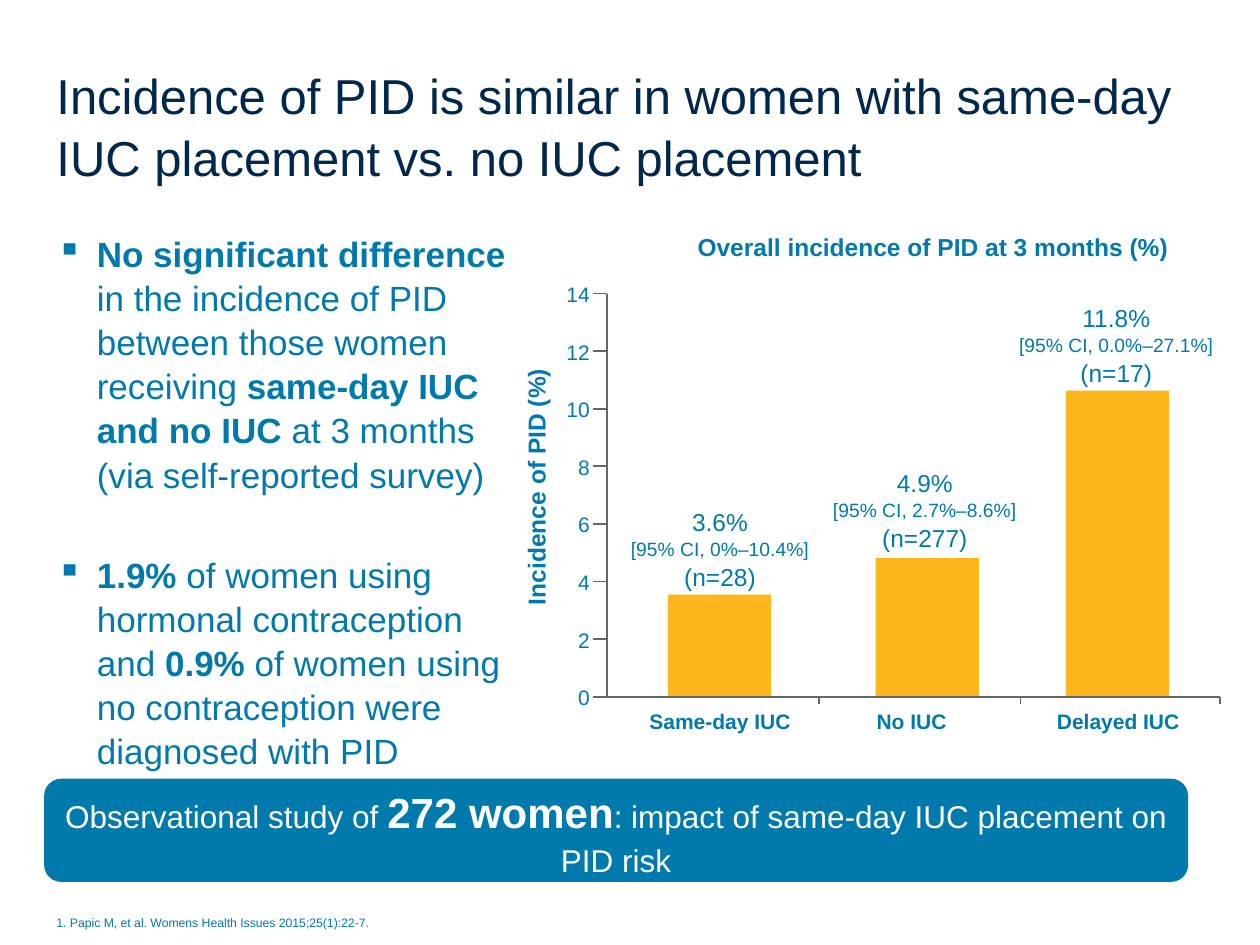
import pptx
import pptx.util
import pptx.dml.color
import pptx.enum.shapes
import pptx.enum.text
import pptx.oxml.ns
import lxml.etree
from dataclasses import dataclass

ALIGN = pptx.enum.text.PP_ALIGN
ANCHOR = pptx.enum.text.MSO_ANCHOR
KIND = pptx.enum.shapes.MSO_SHAPE


@dataclass(frozen=True)
class Theme:
    font: str = "Arial"
    navy: str = "00274C"
    blue: str = "0079AD"
    gold: str = "FDB71C"
    gray: str = "676767"
    white: str = "FFFFFF"
    title: int = 28
    body: int = 20
    large: int = 24
    lead: int = 18
    label: int = 14
    tick: int = 12
    small: int = 11
    note: int = 7
    lines: float = 1.05


T = Theme()

# Chart grid, in columns and rows
AXIS, LEFT, RIGHT = 48.2, 47.1, 96.8
TOP, BASE = 23.3, 55.3
PEAK, STEP = 14, 2
BAR = 8.2


def grid(*cells):
    """Lengths on a grid of 100 columns by 75 rows, ten to the inch."""
    return [pptx.util.Inches(cell / 10) for cell in cells]


def color(code):
    return pptx.dml.color.RGBColor.from_string(code)


def assign(item, **values):
    for name, value in values.items():
        setattr(item, name, value)


def write(para, runs, size, tint=T.blue, align=ALIGN.LEFT):
    """Each run is (text, format); None is a line break."""
    assign(para, alignment=align, line_spacing=T.lines)
    for part in runs:
        if part is None:
            para.add_line_break()
            continue
        words, form = part
        run = para.add_run()
        run.text = words
        run.font.color.rgb = color(tint)
        look = {"name": T.font, "size": size, "bold": False, **form}
        look["size"] = pptx.util.Pt(look["size"])
        assign(run.font, **look)


def text(slide, place, paras, size, tint=T.blue, align=ALIGN.CENTER,
         inset=(1, 0.5), wrap=True, anchor=ANCHOR.TOP):
    box = slide.shapes.add_textbox(*grid(*place))
    side, edge = grid(*inset)
    assign(box.text_frame, word_wrap=wrap, vertical_anchor=anchor,
           margin_left=side, margin_right=side,
           margin_top=edge, margin_bottom=edge)
    for i, runs in enumerate(paras):
        frame = box.text_frame
        para = frame.add_paragraph() if i else frame.paragraphs[0]
        write(para, runs, size, tint, align)
    return box


def bullet(para, indent):
    props = para._p.get_or_add_pPr()
    props.set("marL", str(indent))
    props.set("indent", str(-indent))
    mark = lxml.etree.SubElement(props, pptx.oxml.ns.qn("a:buChar"))
    mark.set("char", "▪")


def line(slide, *ends):
    link = slide.shapes.add_connector(
        pptx.enum.shapes.MSO_CONNECTOR.STRAIGHT, *grid(*ends))
    link.line.color.rgb = color(T.gray)
    link.line.width = pptx.util.Pt(1)
    lxml.etree.SubElement(link._element.spPr, pptx.oxml.ns.qn("a:effectLst"))


def block(slide, kind, place, fill):
    shape = slide.shapes.add_shape(kind, *grid(*place))
    shape.shadow.inherit = False
    shape.fill.solid()
    shape.fill.fore_color.rgb = color(fill)
    shape.line.fill.background()
    return shape


def points(slide):
    bold = {"bold": True}
    box = text(slide, (3.5, 17.8, 37.8, 41.7), [
        [("No significant difference ", bold),
         ("in the incidence of PID between those women receiving ", {}),
         ("same-day IUC and no IUC", bold),
         (" at 3 months (via self-reported survey)", {})],
        [("1.9%", bold),
         (" of women using hormonal contraception and ", {}),
         ("0.9%", bold),
         (" of women using no contraception were diagnosed with PID", {})],
    ], T.body, align=ALIGN.LEFT)
    for para in box.text_frame.paragraphs:
        bullet(para, grid(3.2)[0])
    para.space_before = pptx.util.Pt(32)


def axes(slide):
    line(slide, AXIS, TOP, AXIS, BASE)
    line(slide, LEFT, BASE, RIGHT, BASE)
    for value in range(0, PEAK + 1, STEP):
        row = BASE - (BASE - TOP) * value / PEAK
        if value:
            line(slide, LEFT, row, AXIS, row)
        text(slide, (44.3, row - 1.25, 2.9, 2.4), [[(str(value), {})]],
             T.tick, align=ALIGN.RIGHT, inset=(0.4, 0.2))
    for col in (65, 81, RIGHT):
        line(slide, col, BASE, col, BASE + 0.6)


def bars(slide):
    # Bar left and height, name centre, note centre and top, words
    data = [
        (53, 8.1, 57.15, 57.15, 40.1,
         "Same-day IUC", "3.6%", "0%–10.4%", 28),
        (69.5, 11, 72.35, 73.4, 37,
         "No IUC", "4.9%", "2.7%–8.6%", 277),
        (84.6, 24.3, 88.75, 88.6, 23.9,
         "Delayed IUC", "11.8%", "0.0%–27.1%", 17),
    ]
    for col, high, mid, spot, top, name, rate, span, count in data:
        block(slide, KIND.RECTANGLE, (col, BASE - high, BAR, high), T.gold)
        text(slide, (mid - 7, 56.1, 14, 2), [[(name, {"bold": True})]],
             T.tick, inset=(0, 0))
        text(slide, (spot - 10, top, 20, 6.6), [
            [(rate, {})],
            [(f"[95% CI, {span}]", {"size": T.small}), None,
             (f"(n={count})", {})],
        ], T.label, inset=(0, 0))


def banner(slide):
    shape = block(slide, KIND.ROUNDED_RECTANGLE, (3.5, 61.8, 90.8, 8.2), T.blue)
    assign(shape.text_frame, word_wrap=True, vertical_anchor=ANCHOR.MIDDLE)
    para = shape.text_frame.paragraphs[0]
    write(para, [
        ("Observational study of ", {}),
        ("272 women", {"size": T.large, "bold": True}),
        (": impact of same-day IUC placement on PID risk", {}),
    ], T.lead, T.white, ALIGN.CENTER)
    para.line_spacing = 1.1


def main():
    deck = pptx.Presentation()
    deck.slide_width, deck.slide_height = grid(100, 75)
    slide = deck.slides.add_slide(deck.slide_layouts[6])

    # Title and bullets
    text(slide, (3.5, 3.2, 98, 13.3), [[(
        "Incidence of PID is similar in women with same-day "
        "IUC placement vs. no IUC placement", {})]],
        T.title, T.navy, ALIGN.LEFT, anchor=ANCHOR.MIDDLE)
    points(slide)

    # Chart
    text(slide, (53.2, 18.3, 41.7, 2.4),
         [[("Overall incidence of PID at 3 months (%)", {"bold": True})]],
         T.label, inset=(0, 0), wrap=False)
    side = text(slide, (30.1, 36.8, 25, 3.7),
                [[("Incidence of PID (%)", {"bold": True})]], T.label)
    side.rotation = 270
    bars(slide)
    axes(slide)

    # Banner and source
    banner(slide)
    text(slide, (3.5, 72.1, 72.7, 2.2), [[(
        "1. Papic M, et al. Womens Health Issues 2015;25(1):22-7.", {})]],
        T.note, align=ALIGN.LEFT)
    deck.save("out.pptx")


if __name__ == "__main__":
    main()
